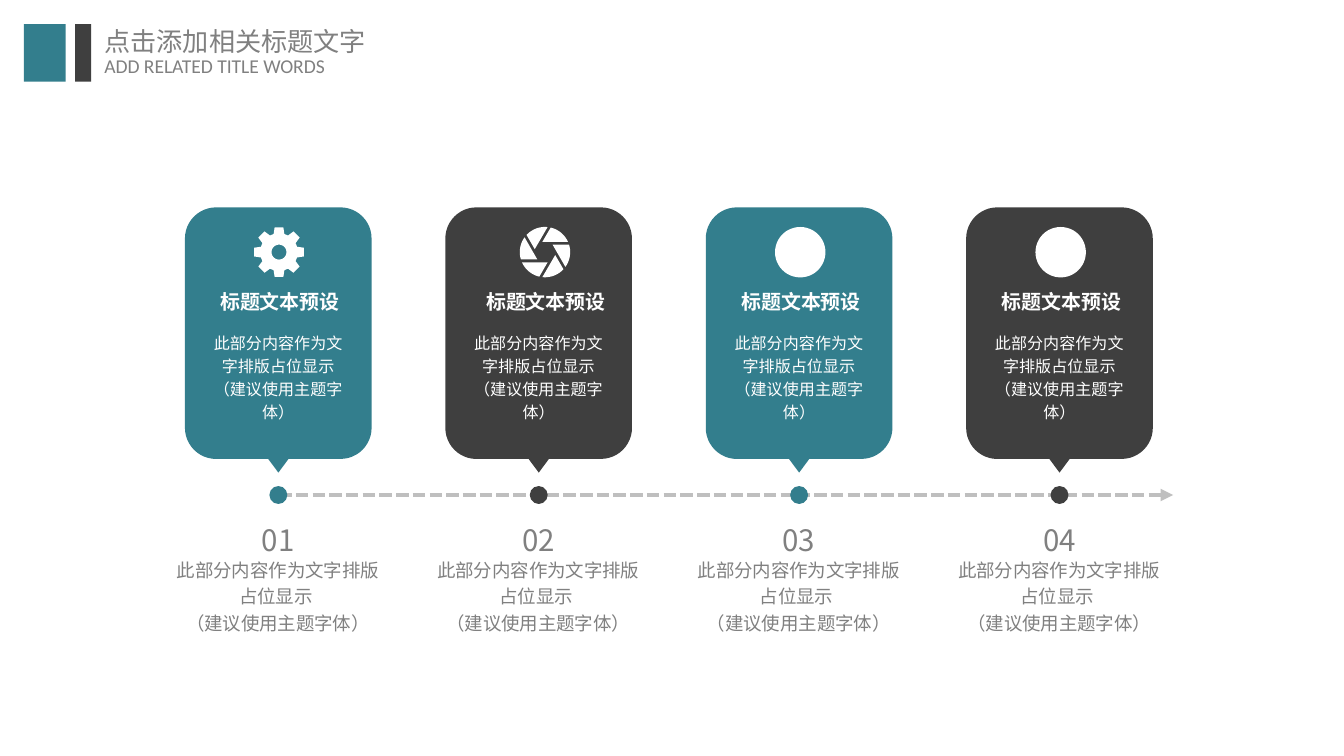
from math import cos, radians, sin

from pptx import Presentation
from pptx.dml.color import RGBColor
from pptx.enum.dml import MSO_LINE
from pptx.enum.shapes import MSO_CONNECTOR, MSO_SHAPE as SHAPE
from pptx.enum.text import MSO_ANCHOR as ANCHOR, PP_ALIGN as ALIGN
from pptx.oxml.ns import qn
from pptx.oxml.xmlchemy import OxmlElement
from pptx.util import Pt

TEAL = RGBColor(0x33, 0x7E, 0x8D)
DARK = RGBColor(0x3F, 0x3F, 0x3F)
GRAY = RGBColor(0x80, 0x80, 0x80)
SILVER = RGBColor(0xBF, 0xBF, 0xBF)
WHITE = RGBColor(0xFF, 0xFF, 0xFF)
LATIN, CJK = "Calibri", "Noto Sans CJK SC"

FIRST_CENTER, PITCH = 149.1, 139.5
CARD_TOP, CARD_W, CARD_H = 111.1, 100, 134.8
ICON_Y, ICON_R = 135.1, 13.5
AXIS_Y, AXIS_END = 265.2, 628.5

CARD_TEXT = "此部分内容作为文字排版占位显示 （建议使用主题字体）"
CAPTION = ["此部分内容作为文字排版占位显示 ", "（建议使用主题字体）"]


def paint(shape, color):
    shape.shadow.inherit = False
    shape.fill.solid()
    shape.fill.fore_color.rgb = color
    shape.line.fill.background()


def add_block(shapes, kind, x, y, w, h, color):
    block = shapes.add_shape(kind, Pt(x), Pt(y), Pt(w), Pt(h))
    paint(block, color)
    return block


def write(frame, lines, size, font, color, bold=False, align=ALIGN.CENTER,
          spacing=None, insets=(0, 0, 0, 0), anchor=ANCHOR.MIDDLE, wrap=False):
    frame.word_wrap = wrap
    frame.vertical_anchor = anchor
    (frame.margin_left, frame.margin_top,
     frame.margin_right, frame.margin_bottom) = map(Pt, insets)
    paragraph = frame.paragraphs[0]
    paragraph.alignment = align
    if spacing:
        paragraph.line_spacing = spacing
    for i, line in enumerate(lines):
        if i:
            paragraph.add_line_break()
        run = paragraph.add_run()
        run.text = line
        run.font.size = Pt(size)
        run.font.name = font
        run.font.bold = bold
        run.font.color.rgb = color


def add_label(slide, x, y, w, h, lines, size, font, color, **style):
    label = slide.shapes.add_textbox(Pt(x), Pt(y), Pt(w), Pt(h))
    write(label.text_frame, lines, size, font, color, **style)


def polar(cx, radius, degrees):
    angle = radians(degrees)
    return Pt(cx + radius * cos(angle)), Pt(ICON_Y + radius * sin(angle))


def add_outline(slide, contours):
    builder = slide.shapes.build_freeform(*contours[0][0])
    for i, contour in enumerate(contours):
        if i:
            builder.move_to(*contour[0])
        builder.add_line_segments(contour[1:], close=True)
    paint(builder.convert_to_shape(), WHITE)


def add_gear(slide, cx):
    tooth = [(10.1, -16.5), (13.5, -10), (13.5, 10), (10.1, 16.5)]
    rim = [polar(cx, r, 45 * i + a) for i in range(8) for r, a in tooth]
    hole = [polar(cx, 4, -10 * i) for i in range(36)]
    add_outline(slide, [rim, hole])


def add_aperture(slide, cx):
    blades = []
    for start in range(36, 396, 60):
        arc = [polar(cx, ICON_R, start - 5.3 * step) for step in range(11)]
        blades.append(arc + [polar(cx, 5.7, start - 80)])
    add_outline(slide, blades)


def add_disc(slide, cx):
    add_block(slide.shapes, SHAPE.OVAL, cx - ICON_R, ICON_Y - ICON_R,
              2 * ICON_R, 2 * ICON_R, WHITE)


def add_header(slide):
    add_block(slide.shapes, SHAPE.RECTANGLE, 12.8, 12.9, 22.4, 30.8, TEAL)
    add_block(slide.shapes, SHAPE.RECTANGLE, 40.2, 12.9, 8.6, 30.8, DARK)
    style = dict(align=ALIGN.LEFT, anchor=ANCHOR.TOP, insets=(7.9, 3.6, 7.9, 3.6))
    add_label(slide, 48, 10, 157, 24.5, ["点击添加相关标题文字"],
              14, CJK, GRAY, **style)
    add_label(slide, 48, 25.4, 142, 21, ["ADD RELATED TITLE WORDS"],
              10.5, LATIN, GRAY, **style)


def add_axis(slide):
    axis = slide.shapes.add_connector(
        MSO_CONNECTOR.STRAIGHT, Pt(149.5), Pt(AXIS_Y), Pt(AXIS_END), Pt(AXIS_Y))
    axis.line.color.rgb = SILVER
    axis.line.width = Pt(2.25)
    axis.line.dash_style = MSO_LINE.SQUARE_DOT
    properties = axis.element.spPr
    arrowhead = OxmlElement("a:tailEnd")
    arrowhead.set("type", "triangle")
    properties.find(qn("a:ln")).append(arrowhead)
    properties.append(OxmlElement("a:effectLst"))


def add_step(slide, number, cx, color, add_icon, shift):
    # Card with its pointer
    callout = slide.shapes.add_group_shape().shapes
    card = add_block(callout, SHAPE.ROUNDED_RECTANGLE, cx - CARD_W / 2,
                     CARD_TOP, CARD_W, CARD_H, color)
    write(card.text_frame, [CARD_TEXT], 8.6, LATIN, WHITE, spacing=1.2,
          insets=(7.2, 60.6, 7.2, 3.6), anchor=ANCHOR.TOP, wrap=True)
    pointer = add_block(callout, SHAPE.ISOSCELES_TRIANGLE, cx - 7.5, 243.1, 15, 10.1, color)
    pointer.rotation = 180

    # Icon and card title
    add_icon(slide, cx + shift)
    add_label(slide, cx + shift - 37, 152.7, 75, 18, ["标题文本预设"], 10.7,
              LATIN, WHITE, bold=True, insets=(5, 2.9, 5, 2.9))

    # Dot, number and caption
    add_block(slide.shapes, SHAPE.OVAL, cx - 4.8, AXIS_Y - 4.8, 9.6, 9.6, color)
    add_label(slide, cx - 15, 280, 30, 18, [f"{number:02}"], 15.8, CJK, GRAY, wrap=True)
    add_label(slide, cx - 57.4, 298.2, 114.4, 40.3, CAPTION, 9.9, CJK, GRAY,
              spacing=1.2, wrap=True)


def main():
    deck = Presentation()
    deck.slide_width, deck.slide_height = Pt(720), Pt(405)
    slide = deck.slides.add_slide(deck.slide_layouts[6])
    add_header(slide)
    add_axis(slide)
    steps = [(TEAL, add_gear, 0.4), (DARK, add_aperture, 3.4),
             (TEAL, add_disc, 0.6), (DARK, add_disc, 0.6)]
    for i, (color, add_icon, shift) in enumerate(steps):
        add_step(slide, i + 1, FIRST_CENTER + i * PITCH, color, add_icon, shift)
    deck.save("out.pptx")


if __name__ == "__main__":
    main()
